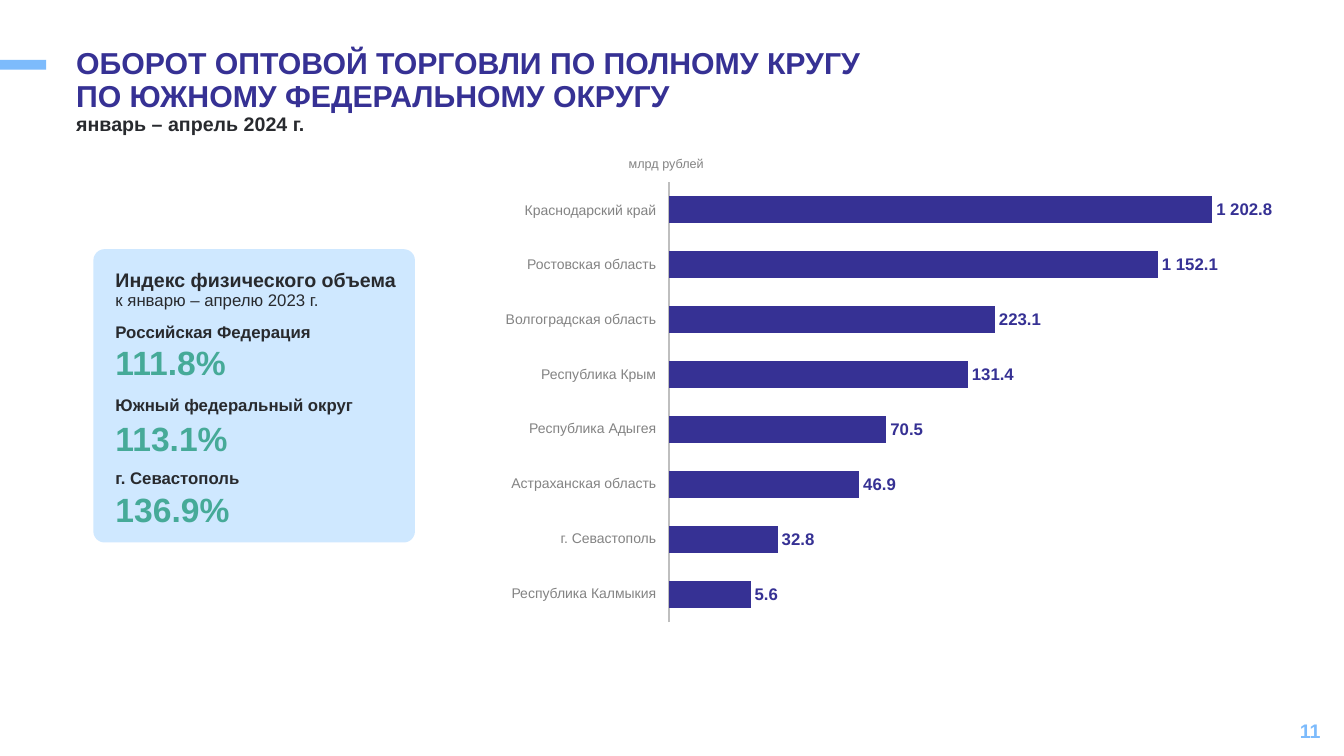
from lxml import etree
from pptx import Presentation
from pptx.chart.data import CategoryChartData
from pptx.dml.color import RGBColor
from pptx.enum.chart import XL_CHART_TYPE as ChartType, XL_LABEL_POSITION as LabelPos
from pptx.enum.chart import XL_TICK_LABEL_POSITION as TickLabelPos, XL_TICK_MARK as TickMark
from pptx.enum.shapes import MSO_SHAPE as Shape
from pptx.enum.text import MSO_ANCHOR as Anchor, PP_ALIGN as Align
from pptx.oxml.ns import qn
from pptx.util import Pt

FONT = "Arial"
COLORS = {
    "navy": "363194",
    "sky": "7DBBFC",
    "pale": "CFE8FF",
    "ink": "282A2E",
    "grey": "838383",
    "green": "46AA98",
    "axis": "BFBFBF",
}
INSETS = (7.2, 3.6, 7.2, 3.6)

# Region, bar length, figure shown; from the bottom bar to the top one
TURNOVER = [
    ("Республика Калмыкия", 75, "5.6"),
    ("г. Севастополь", 100, "32.8"),
    ("Астраханская область", 175, "46.9"),
    ("Республика Адыгея", 200, "70.5"),
    ("Республика Крым", 275, "131.4"),
    ("Волгоградская область", 300, "223.1"),
    ("Ростовская область", 450, "1 152.1"),
    ("Краснодарский край", 500, "1 202.8"),
]
# Region, index, drop from the region's name to the index
INDEXES = [
    ("Российская Федерация", "111.8%", 14.2),
    ("Южный федеральный округ", "113.1%", 16.5),
    ("г. Севастополь", "136.9%", 15),
]
PLOT = {"x": 0.049, "y": 0.034, "w": 0.951, "h": 0.931}


def rgb(name):
    return RGBColor.from_string(COLORS[name])


def style(font, size, color, bold=False):
    font.name, font.size, font.bold = FONT, Pt(size), bold
    font.color.rgb = rgb(color)


def add_text(page, box, lines, align=Align.LEFT, anchor=Anchor.TOP,
             spacing=None, insets=INSETS, wrap=True):
    """Write one paragraph; each line is (text, size, color, bold)."""
    frame = page.shapes.add_textbox(*map(Pt, box)).text_frame
    frame.word_wrap = wrap
    frame.vertical_anchor = anchor
    (frame.margin_left, frame.margin_top,
     frame.margin_right, frame.margin_bottom) = map(Pt, insets)
    para = frame.paragraphs[0]
    para.alignment = align
    if spacing:
        para.line_spacing = spacing
    for number, (text, *look) in enumerate(lines):
        if number:
            para.add_line_break()
        span = para.add_run()
        span.text = text
        style(span.font, *look)


def add_block(page, kind, box, color):
    block = page.shapes.add_shape(kind, *map(Pt, box))
    block.shadow.inherit = False
    block.fill.solid()
    block.fill.fore_color.rgb = rgb(color)
    block.line.fill.background()
    return block


def add_heading(page, box):
    left, top, width, height = box
    add_block(page, Shape.RECTANGLE, (0, top + 11.7, 33, 7), "sky")
    title = ("ОБОРОТ ОПТОВОЙ ТОРГОВЛИ ПО ПОЛНОМУ КРУГУ",
             "ПО ЮЖНОМУ ФЕДЕРАЛЬНОМУ ОКРУГУ")
    add_text(page, (left, top, width, 41),
             [(line, 21.6, "navy", True) for line in title], spacing=0.9)
    add_text(page, (left, top + 47.2, width, height - 47.2),
             [("январь – апрель 2024 г.", 14, "ink", True)], spacing=0.9)


def add_index_card(page, box):
    left, top, width, height = box
    card = add_block(page, Shape.ROUNDED_RECTANGLE, box, "pale")
    card.adjustments[0] = 0.038
    text_left = left + 8.7
    add_text(page, (text_left, top + 11.8, width + 5, 35),
             [("Индекс физического объема", 14, "ink", True),
              ("к январю – апрелю 2023 г.", 12, "ink", False)], spacing=0.9)
    for row, (region, value, drop) in enumerate(INDEXES):
        row_top = top + 48.4 + 52 * row
        add_text(page, (text_left, row_top, width, 22), [(region, 12, "ink", True)])
        add_text(page, (text_left, row_top + drop, 145, 36), [(value, 24, "green", True)])


def set_plot_area(chart):
    """Pin the inner plot area to the fractions in PLOT."""
    area = chart._chartSpace.chart.plotArea
    for old in area.findall(qn("c:layout")):
        area.remove(old)
    layout = etree.Element(qn("c:layout"))
    area.insert(0, layout)
    manual = etree.SubElement(layout, qn("c:manualLayout"))
    settings = [("layoutTarget", "inner"), ("xMode", "edge"), ("yMode", "edge"), *PLOT.items()]
    for tag, value in settings:
        etree.SubElement(manual, qn(f"c:{tag}")).set("val", str(value))


def add_turnover_chart(page, box):
    data = CategoryChartData()
    data.categories = [str(number + 1) for number in range(len(TURNOVER))]
    data.add_series("Series 1", [length for _, length, _ in TURNOVER])
    chart = page.shapes.add_chart(ChartType.BAR_CLUSTERED, *map(Pt, box), data).chart
    style(chart.font, 18, "ink")
    chart.has_legend = chart.has_title = False
    set_plot_area(chart)

    regions = chart.category_axis
    regions.tick_label_position = TickLabelPos.NONE
    regions.major_tick_mark = regions.minor_tick_mark = TickMark.NONE
    regions.has_major_gridlines = False
    regions.format.line.color.rgb = rgb("axis")
    regions.format.line.width = Pt(1)
    scale = chart.value_axis
    scale.has_major_gridlines = False
    scale.visible = False

    plot = chart.plots[0]
    plot.gap_width, plot.overlap = 100, 9
    plot.vary_by_categories = False
    series = plot.series[0]
    series.format.fill.solid()
    series.format.fill.fore_color.rgb = rgb("navy")
    labels = series.data_labels
    labels.show_value = True
    labels.position = LabelPos.OUTSIDE_END
    style(labels.font, 12, "sky", True)
    for number, (_, _, figure) in enumerate(TURNOVER):
        label = series.points[number].data_label
        span = label.text_frame.paragraphs[0].add_run()
        span.text = figure
        style(span.font, 12, "navy", True)
        label.position = LabelPos.OUTSIDE_END


def add_turnover(page, box):
    """Place the chart, the region names to its left and the unit above."""
    left, top, _, height = box
    add_turnover_chart(page, box)
    for row, (region, _, _) in enumerate(reversed(TURNOVER)):
        add_text(page, (left - 147.4, top + 24 + 39.1 * row, 162, 13),
                 [(region, 10, "grey")], align=Align.RIGHT,
                 anchor=Anchor.MIDDLE, insets=(0, 1, 0, 0))
    add_text(page, (left - 12, top - 10.8, 69, 18),
             [("млрд рублей", 9, "grey")], wrap=False)


def add_page_number(page, box):
    add_text(page, box, [("11", 14, "sky", True)], align=Align.RIGHT, anchor=Anchor.MIDDLE)


def main():
    deck = Presentation()
    deck.slide_width, deck.slide_height = Pt(960), Pt(540)
    page = deck.slides.add_slide(deck.slide_layouts[6])
    add_page_number(page, (734.4, 507.6, 216, 28.8))
    add_heading(page, (47.3, 31, 749.5, 78.4))
    add_turnover(page, (454, 118.6, 489.6, 337.7))
    add_index_card(page, (66.7, 178, 229.7, 209.5))
    deck.save("out.pptx")


if __name__ == "__main__":
    main()
